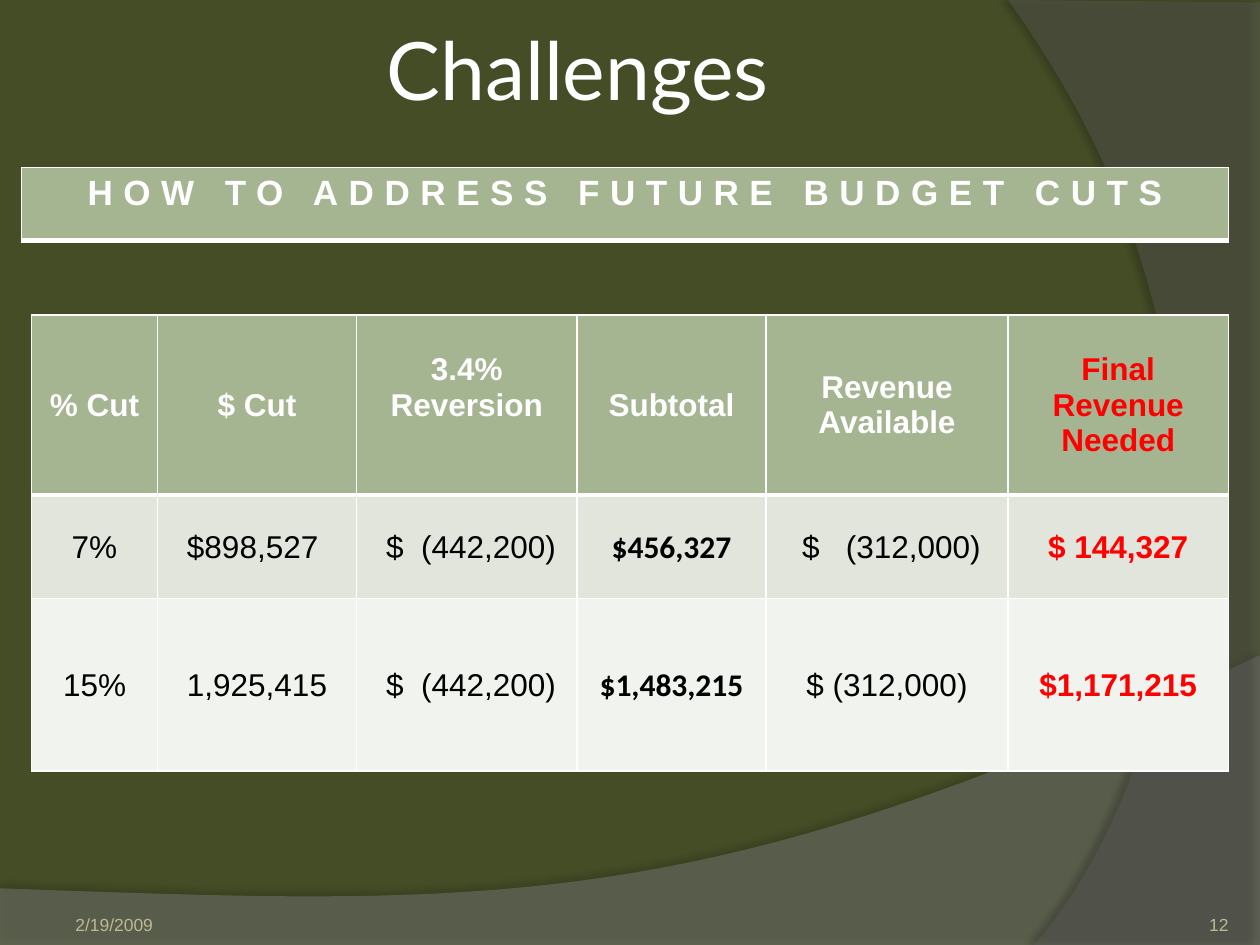
"""Build the Challenges slide on future budget cuts."""
import lxml.etree
import pptx
import pptx.dml.color
import pptx.enum.text
import pptx.oxml.ns
import pptx.util

Inches = pptx.util.Inches
Pt = pptx.util.Pt
RGBColor = pptx.dml.color.RGBColor
Align = pptx.enum.text.PP_ALIGN
Anchor = pptx.enum.text.MSO_ANCHOR
qn = pptx.oxml.ns.qn

OLIVE = RGBColor(0x44, 0x4D, 0x26)
WAVE_GREY = RGBColor(0x7F, 0x7F, 0x7F)
SIDE_GREY = RGBColor(0x5E, 0x5E, 0x5E)
WHITE = RGBColor(0xFF, 0xFF, 0xFF)
BLACK = RGBColor(0, 0, 0)
RED = RGBColor(0xFF, 0, 0)
FOOTER = RGBColor(0xBC, 0xB9, 0x95)
SAGE = RGBColor(0xA5, 0xB5, 0x92)
BAND_DARK = RGBColor(0xE1, 0xE5, 0xDC)
BAND_LIGHT = RGBColor(0xF0, 0xF3, 0xEE)

COLUMNS = [1, 1.58, 1.75, 1.5, 1.92, 1.75]
ROWS = [1.43, 0.82, 1.37]
HEADERS = ["% Cut", "$ Cut", "3.4% Reversion", "Subtotal",
           "Revenue Available", "Final Revenue Needed"]
CUTS = [
    (BAND_DARK, ["7%", "$898,527 ", " $  (442,200)", "$456,327",
                 " $   (312,000)", " $ 144,327 "]),
    (BAND_LIGHT, ["15%", "1,925,415", " $  (442,200)", "$1,483,215",
                  " $ (312,000) ", " $1,171,215 "]),
]
REVERSION, SUBTOTAL, NEEDED = 2, 3, 5


def bezier(start, c1, c2, end, steps=40):
    """Return points along a cubic curve, after its start."""
    points = []
    for i in range(1, steps + 1):
        t = i / steps
        u = 1 - t
        weights = (u ** 3, 3 * u * u * t, 3 * u * t * t, t ** 3)
        points.append(tuple(
            sum(w * c for w, c in zip(weights, axis))
            for axis in zip(start, c1, c2, end)))
    return points


def add_backdrop(slide, points, color, opacity, shadow):
    """Add a translucent closed outline with an outer shadow."""
    emu = [(Inches(x), Inches(y)) for x, y in points]
    builder = slide.shapes.build_freeform(*emu[0])
    builder.add_line_segments(emu[1:], close=True)
    sp = builder.convert_to_shape()
    sp.line.fill.background()
    sp.fill.solid()
    sp.fill.fore_color.rgb = color
    add = lxml.etree.SubElement
    clr = sp.fill._xPr.find(qn("a:solidFill"))[0]
    add(clr, qn("a:alpha"), val=str(opacity * 1000))
    sp.shadow.inherit = False
    alpha, blur, dist, angle = shadow
    effects = sp._element.spPr.find(qn("a:effectLst"))
    outer = add(effects, qn("a:outerShdw"), blurRad=str(Pt(blur)),
                dist=str(Pt(dist)), dir=str(angle * 60000), rotWithShape="0")
    shade = add(outer, qn("a:srgbClr"), val=str(BLACK))
    add(shade, qn("a:alpha"), val=str(alpha * 1000))


def add_run(p, text, size, color, font="Arial", bold=False):
    """Add one formatted run to a paragraph."""
    r = p.add_run()
    r.text = text
    r.font.size = Pt(size)
    r.font.name = font
    r.font.bold = bold
    r.font.color.rgb = color
    return r


def add_text(slide, box, text, size, color, font, align, anchor, insets):
    """Add a one-line text box."""
    tf = slide.shapes.add_textbox(*map(Inches, box)).text_frame
    tf.word_wrap = True
    tf.vertical_anchor = anchor
    (tf.margin_left, tf.margin_top,
     tf.margin_right, tf.margin_bottom) = map(Inches, insets)
    p = tf.paragraphs[0]
    p.alignment = align
    add_run(p, text, size, color, font)


def add_table(slide, left, top, columns, rows):
    """Add a plain table with the given column widths and row heights."""
    frame = slide.shapes.add_table(
        len(rows), len(columns), Inches(left), Inches(top),
        Inches(sum(columns)), Inches(sum(rows)))
    table = frame.table
    table.first_row = False
    table.horz_banding = False
    for column, width in zip(table.columns, columns):
        column.width = Inches(width)
    for row, height in zip(table.rows, rows):
        row.height = Inches(height)
    return table


def style_cell(cell, fill, top=1, bottom=1, anchor=Anchor.MIDDLE):
    """Give a cell white borders and a fill; return its centred paragraph."""
    tcPr = cell._tc.get_or_add_tcPr()
    for side, width in (("L", 1), ("R", 1), ("T", top), ("B", bottom)):
        ln = lxml.etree.SubElement(tcPr, qn("a:ln" + side), w=str(Pt(width)))
        solid = lxml.etree.SubElement(ln, qn("a:solidFill"))
        lxml.etree.SubElement(solid, qn("a:srgbClr"), val=str(WHITE))
    cell.fill.solid()
    cell.fill.fore_color.rgb = fill
    cell.vertical_anchor = anchor
    p = cell.text_frame.paragraphs[0]
    p.alignment = Align.CENTER
    return p


def add_banner(slide):
    """Add the one-cell heading table with spaced letters."""
    cell = add_table(slide, 0.17, 1.33, [9.58], [0.58]).cell(0, 0)
    p = style_cell(cell, SAGE, bottom=3, anchor=Anchor.TOP)
    r = add_run(p, "HOW TO ADDRESS FUTURE BUDGET CUTS", 20, WHITE, bold=True)
    r.font._element.set("spc", "600")


def add_cuts_table(slide):
    """Add the table of cuts and the revenue they call for."""
    table = add_table(slide, 0.25, 2.5, COLUMNS, ROWS)
    for col, text in enumerate(HEADERS):
        p = style_cell(table.cell(0, col), SAGE, bottom=3)
        add_run(p, text, 18, RED if col == NEEDED else WHITE, bold=True)
    table.cell(0, REVERSION).margin_bottom = Inches(0.33)
    for row, (fill, values) in enumerate(CUTS, start=1):
        for col, text in enumerate(values):
            cell = table.cell(row, col)
            p = style_cell(cell, fill, top=3 if row == 1 else 1)
            cell.margin_left = cell.margin_right = Inches(0.01)
            cell.margin_top, cell.margin_bottom = Inches(0.01), 0
            add_run(p, text, 18, RED if col == NEEDED else BLACK,
                    "Calibri" if col == SUBTOTAL else "Arial",
                    col in (SUBTOTAL, NEEDED))


def main():
    """Build and save the slide."""
    prs = pptx.Presentation()
    prs.slide_width, prs.slide_height = Inches(10), Inches(7.5)
    slide = prs.slides.add_slide(prs.slide_layouts[6])
    slide.background.fill.solid()
    slide.background.fill.fore_color.rgb = OLIVE

    wave = [(0, 7.05), (0, 7.51), (10, 7.51), (10, 5.2)]
    wave += bezier((10, 5.2), (5.59, 7.29), (3.91, 7.19), (0, 7.05))
    add_backdrop(slide, wave, WAVE_GREY, 45, (35, 4, 3.5, 270))
    side = [(10, 0.02), (10, 7.5), (8.21, 7.5)]
    side += bezier((8.21, 7.5), (9.35, 6.19), (10.18, 3), (8, 0))
    add_backdrop(slide, side, SIDE_GREY, 40, (45, 4, 4, 180))

    add_text(slide, (0.5, 0, 8.17, 1.08), "Challenges", 46, WHITE, "Lato",
             Align.CENTER, Anchor.MIDDLE, (0.05, 0.05, 0.05, 0.05))
    add_text(slide, (0.5, 7.02, 2.33, 0.4), "2/19/2009", 10, FOOTER, "Arial",
             Align.LEFT, Anchor.BOTTOM, (0.1, 0.05, 0.1, 0))
    add_text(slide, (8.92, 7.02, 0.83, 0.4), "12", 10, FOOTER, "Arial",
             Align.RIGHT, Anchor.BOTTOM, (0, 0, 0, 0))
    add_banner(slide)
    add_cuts_table(slide)
    prs.save("out.pptx")


if __name__ == "__main__":
    main()
